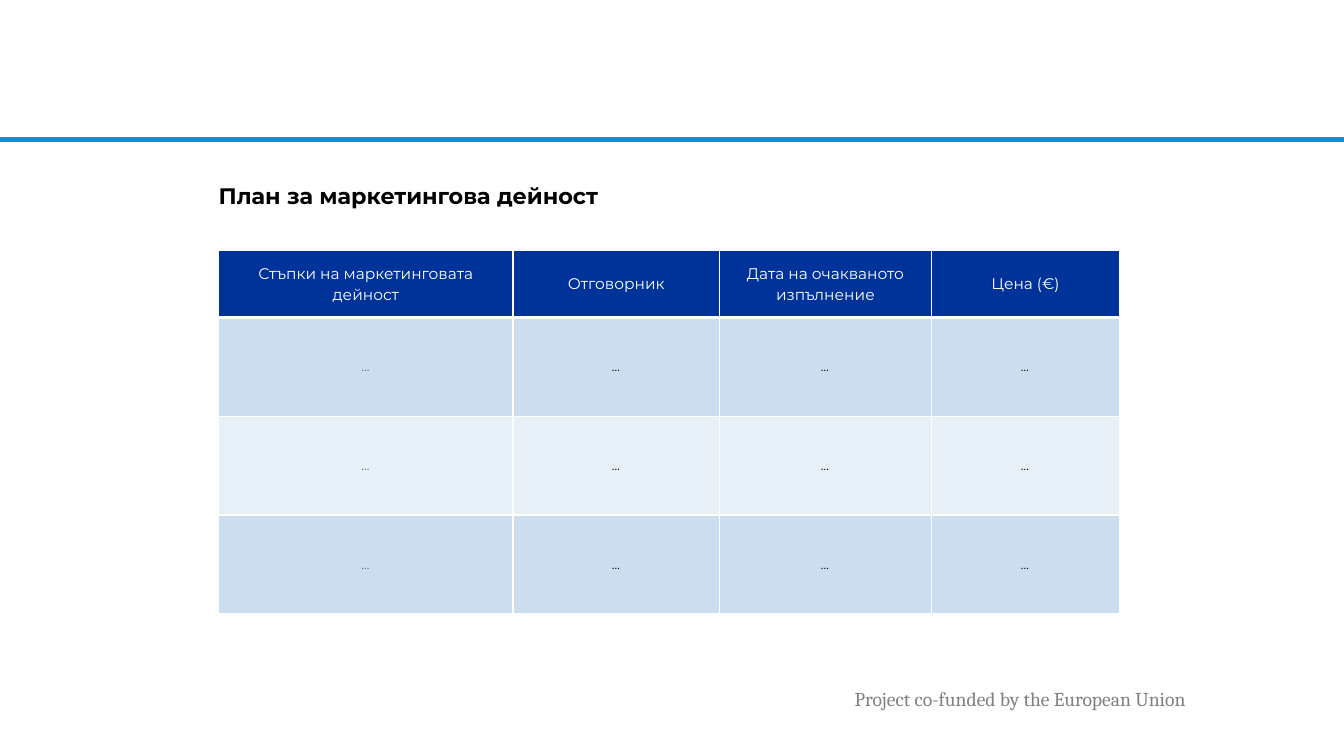
from dataclasses import dataclass

import pptx
import pptx.dml.color
import pptx.enum.shapes
import pptx.enum.text
import pptx.oxml
import pptx.oxml.ns
import pptx.util

Pt = pptx.util.Pt
ALIGN = pptx.enum.text.PP_ALIGN
ANCHOR = pptx.enum.text.MSO_ANCHOR


@dataclass(frozen=True)
class Theme:
    font: str = "Montserrat"
    footer_font: str = "Cambria"
    black: str = "000000"
    white: str = "FFFFFF"
    grey: str = "808080"
    teal: str = "3C7486"
    rule: str = "0C94B7"
    rule_edge: str = "0096D3"
    header: str = "003399"
    bands: tuple[str, str] = ("CCDDEF", "E7EFF7")
    title_size: float = 16
    footer_size: float = 14
    header_size: float = 11
    body_size: float = 9


@dataclass(frozen=True)
class Column:
    heading: str
    width: float
    color: str


@dataclass(frozen=True)
class RunStyle:
    size: float
    color: str
    font: str = Theme.font
    bold: bool = False
    italic: bool = False


THEME = Theme()
COLUMNS = (
    Column("Стъпки на маркетинговата дейност", 210.24, THEME.teal),
    Column("Отговорник", 147.6, THEME.black),
    Column("Дата на очакваното изпълнение", 151.2, THEME.black),
    Column("Цена (€)", 134.64, THEME.black),
)
BODY_ROWS = 3
HEADER_HEIGHT, ROW_HEIGHT = 48.24, 70.56
LEFT = 156.24


def rgb(color: str) -> pptx.dml.color.RGBColor:
    return pptx.dml.color.RGBColor.from_string(color)


def add_run(p, text: str, style: RunStyle) -> None:
    r = p.add_run()
    r.text = text
    r.font.name = style.font
    r.font.size = Pt(style.size)
    r.font.bold = style.bold
    r.font.italic = style.italic
    r.font.color.rgb = rgb(style.color)


def set_borders(cell, bottom: float) -> None:
    """Borders precede the fill in the cell properties."""
    tc_pr = cell._tc.get_or_add_tcPr()
    for side, width in (("L", 1), ("R", 1), ("T", 1), ("B", bottom)):
        tc_pr.append(pptx.oxml.parse_xml(
            f'<a:ln{side} {pptx.oxml.ns.nsdecls("a")} w="{Pt(width)}"><a:solidFill>'
            f'<a:srgbClr val="{THEME.white}"/></a:solidFill></a:ln{side}>'))


def fill_cell(cell, text: str, style: RunStyle, fill: str, bottom: float = 1) -> None:
    set_borders(cell, bottom)
    cell.fill.solid()
    cell.fill.fore_color.rgb = rgb(fill)
    cell.vertical_anchor = ANCHOR.MIDDLE
    cell.margin_left = cell.margin_right = Pt(5)
    cell.margin_top = cell.margin_bottom = 0
    p = cell.text_frame.paragraphs[0]
    p.alignment = ALIGN.CENTER
    p.line_spacing = 1.07
    p.space_after = Pt(8)
    add_run(p, text, style)


def add_rule(s) -> None:
    sp = s.shapes.add_shape(pptx.enum.shapes.MSO_SHAPE.RECTANGLE,
                            0, Pt(98.64), Pt(960), Pt(2.16))
    sp.shadow.inherit = False
    sp.fill.solid()
    sp.fill.fore_color.rgb = rgb(THEME.rule)
    sp.line.color.rgb = rgb(THEME.rule_edge)
    sp.line.width = Pt(1)


def add_footer(s) -> None:
    sp = s.shapes.add_textbox(Pt(603.36), Pt(487.44), Pt(351.36), Pt(24.48))
    tf = sp.text_frame
    tf.word_wrap = True
    add_run(tf.paragraphs[0], "Project co-funded by the European Union",
            RunStyle(THEME.footer_size, THEME.grey, THEME.footer_font))


def set_title(s) -> None:
    sp = s.shapes.title
    sp.left, sp.top, sp.width, sp.height = Pt(LEFT), Pt(126.72), Pt(611.28), Pt(364.32)
    tf = sp.text_frame
    tf.word_wrap = True
    tf.auto_size = pptx.enum.text.MSO_AUTO_SIZE.NONE
    tf.vertical_anchor = ANCHOR.TOP
    tf.margin_left = tf.margin_right = 0
    tf.margin_top = tf.margin_bottom = Pt(3.6)
    p = tf.paragraphs[0]
    p.alignment = ALIGN.LEFT
    p.space_after = Pt(6)
    add_run(p, "План за маркетингова дейност",
            RunStyle(THEME.title_size, THEME.black, bold=True))


def add_plan_table(s) -> None:
    width = sum(column.width for column in COLUMNS)
    height = HEADER_HEIGHT + BODY_ROWS * ROW_HEIGHT
    table = s.shapes.add_table(BODY_ROWS + 1, len(COLUMNS), Pt(LEFT), Pt(178.56),
                               Pt(width), Pt(height)).table
    table.rows[0].height = Pt(HEADER_HEIGHT)
    for row in range(1, BODY_ROWS + 1):
        table.rows[row].height = Pt(ROW_HEIGHT)

    for col, column in enumerate(COLUMNS):
        table.columns[col].width = Pt(column.width)
        fill_cell(table.cell(0, col), column.heading,
                  RunStyle(THEME.header_size, THEME.white), THEME.header, bottom=3)
        for row in range(1, BODY_ROWS + 1):
            fill_cell(table.cell(row, col), "…",
                      RunStyle(THEME.body_size, column.color, italic=True),
                      THEME.bands[(row - 1) % 2])


def main() -> None:
    prs = pptx.Presentation()
    prs.slide_width, prs.slide_height = Pt(960), Pt(540)
    s = prs.slides.add_slide(prs.slide_layouts.get_by_name("Title Only"))

    # Page frame
    add_rule(s)
    add_footer(s)

    # Content
    set_title(s)
    add_plan_table(s)

    prs.save("out.pptx")


if __name__ == "__main__":
    main()
